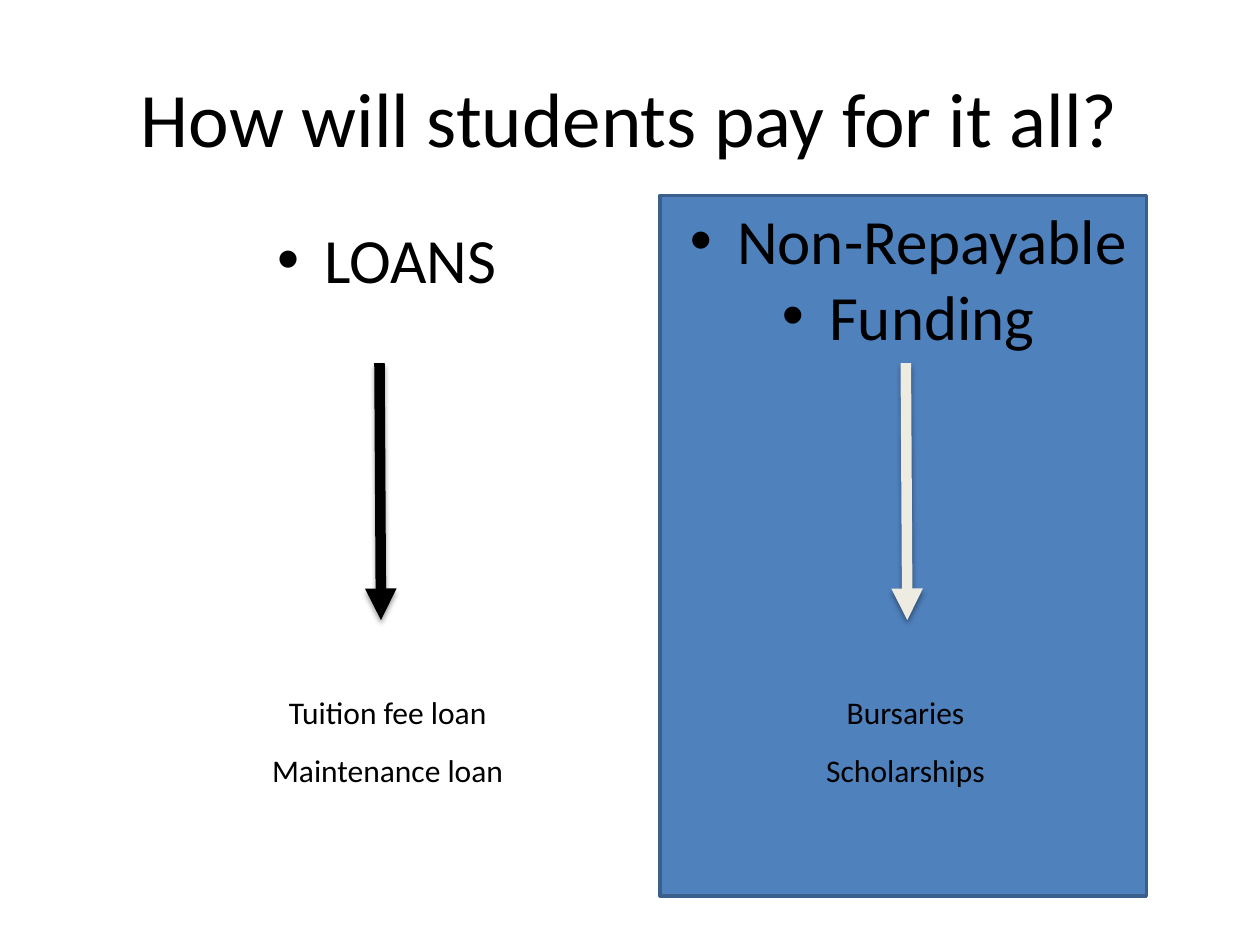
"""Build a slide that sets student loans beside non-repayable funding."""
from dataclasses import dataclass

from lxml.etree import SubElement
from pptx import Presentation
from pptx.dml.color import RGBColor
from pptx.enum.shapes import MSO_CONNECTOR, MSO_SHAPE
from pptx.enum.text import MSO_ANCHOR, PP_ALIGN
from pptx.oxml.ns import qn
from pptx.util import Cm, Pt


@dataclass(frozen=True)
class Theme:
    """Colours, font and type sizes."""
    ink: RGBColor = RGBColor(0, 0, 0)
    pale: RGBColor = RGBColor.from_string("EEECE1")
    panel: RGBColor = RGBColor.from_string("4F81BD")
    edge: RGBColor = RGBColor.from_string("3A5F8C")
    font: str = "Calibri"
    title: Pt = Pt(44)
    head: Pt = Pt(36)
    body: Pt = Pt(18)


def write(area, lines, size, gap=0, dots=False, anchor=MSO_ANCHOR.TOP):
    """Add a centred text box with one paragraph per line."""
    frame = slide.shapes.add_textbox(*map(Cm, area)).text_frame
    frame.word_wrap = True
    frame.vertical_anchor = anchor
    for num, line in enumerate(lines):
        para = frame.add_paragraph() if num else frame.paragraphs[0]
        para.text = line
        para.alignment = PP_ALIGN.CENTER
        para.space_before = Pt(gap if num else 0)
        if dots:
            props = para._p.get_or_add_pPr()
            props.set("marL", str(Cm(0.95)))
            props.set("indent", str(-Cm(0.95)))
            SubElement(props, qn("a:buFont"), typeface="Arial")
            SubElement(props, qn("a:buChar"), char="•")
        para.font.name = theme.font
        para.font.size = size
        para.font.color.rgb = theme.ink


def arrow(left, color):
    """Add a thick downward arrow with a soft shadow."""
    line = slide.shapes.add_connector(
        MSO_CONNECTOR.STRAIGHT, Cm(left), Cm(7.32), Cm(left + 0.03), Cm(12.5))
    line.line.color.rgb = color
    line.line.width = Pt(6)
    SubElement(line.line._get_or_add_ln(), qn("a:tailEnd"), type="triangle")
    effects = SubElement(line._element.spPr, qn("a:effectLst"))
    shadow = SubElement(
        effects, qn("a:outerShdw"), blurRad=str(Pt(3.1)), dist=str(Pt(1.6)),
        dir="5400000", rotWithShape="0")
    shade = SubElement(shadow, qn("a:srgbClr"), val=str(theme.ink))
    SubElement(shade, qn("a:alpha"), val="38000")


theme = Theme()
deck = Presentation()
deck.slide_width, deck.slide_height = Cm(25.4), Cm(19.05)
slide = deck.slides.add_slide(deck.slide_layouts[6])

panel = slide.shapes.add_shape(
    MSO_SHAPE.RECTANGLE, Cm(13.31), Cm(3.94), Cm(9.8), Cm(14.12))
panel.shadow.inherit = False
panel.fill.solid()
panel.fill.fore_color.rgb = theme.panel
panel.line.color.rgb = theme.edge
panel.line.width = Pt(2)

write((1.27, 0.76, 22.86, 3.18), ["How will students pay for it all?"],
      theme.title, anchor=MSO_ANCHOR.MIDDLE)

columns = [
    ((2.77, 4.32, 10.06, 2.29), ["LOANS"], 7.65, theme.ink,
     3.61, ["Tuition fee loan", "Maintenance loan"]),
    ((13.28, 3.94, 10.06, 3.28), ["Non-Repayable", "Funding"], 18.26, theme.pale,
     14.05, ["Bursaries", "Scholarships"]),
]
for area, heads, shaft, color, left, items in columns:
    write(area, heads, theme.head, dots=True)
    arrow(shaft, color)
    write((left, 13.84, 8.41, 2.74), items, theme.body, gap=12)

deck.save("out.pptx")
